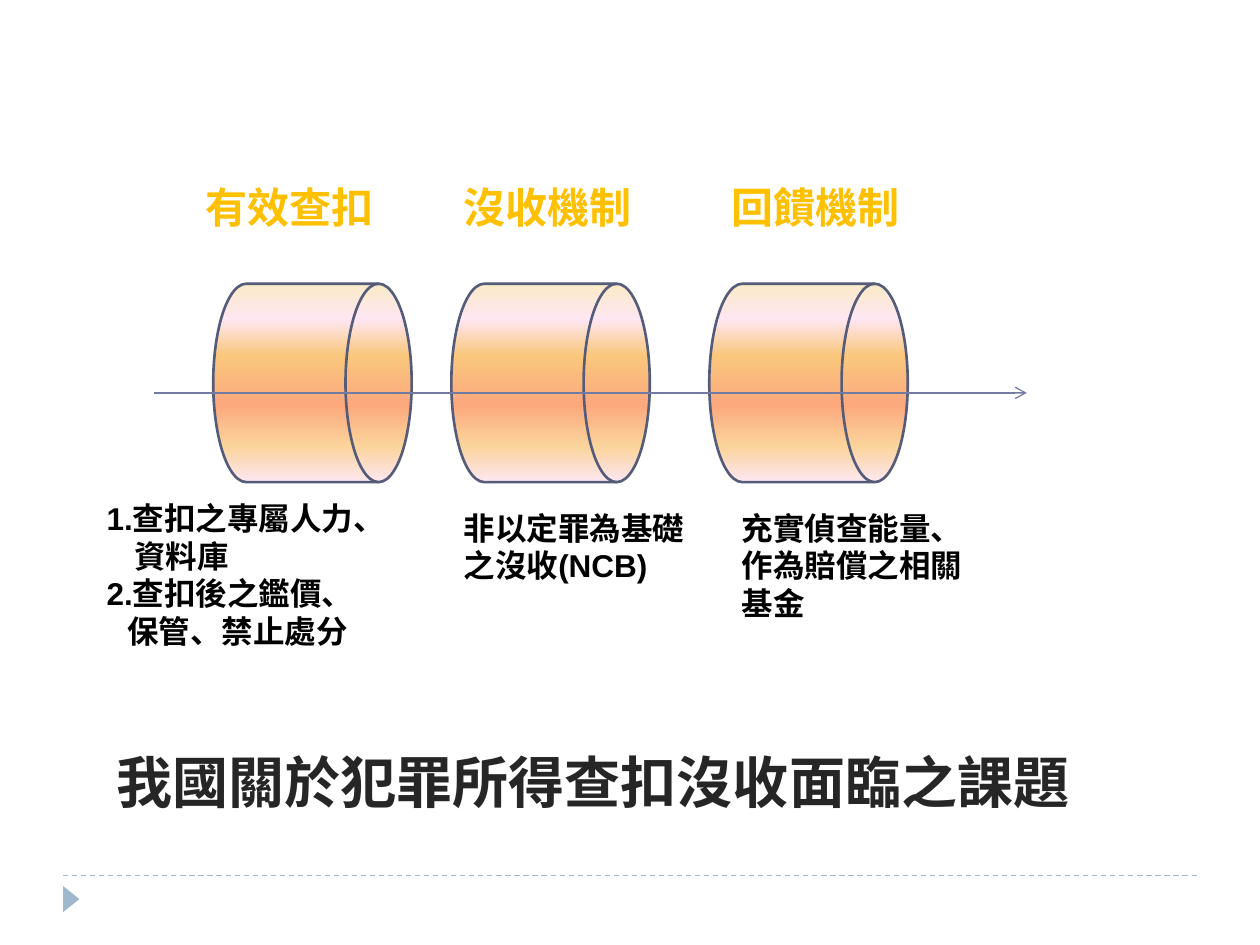
from collections import namedtuple

from lxml.etree import SubElement
from pptx import Presentation
from pptx.dml.color import RGBColor
from pptx.enum.dml import MSO_LINE
from pptx.enum.shapes import MSO_CONNECTOR, MSO_SHAPE
from pptx.enum.text import MSO_ANCHOR, PP_ALIGN
from pptx.oxml.ns import qn
from pptx.util import Cm, Pt

GOLD = RGBColor(0xFF, 0xC0, 0x00)
BLACK = RGBColor(0x00, 0x00, 0x00)
CHARCOAL = RGBColor(0x26, 0x26, 0x26)
SLATE = RGBColor(0x54, 0x5C, 0x79)
INDIGO = RGBColor(0x72, 0x7C, 0xA3)
PALE_BLUE = RGBColor(0x9F, 0xB8, 0xCD)
SUNRISE = [
    (0, RGBColor(0xFB, 0xEA, 0xC7)),
    (18, RGBColor(0xFE, 0xE7, 0xF2)),
    (36, RGBColor(0xFA, 0xC7, 0x7D)),
    (61, RGBColor(0xFB, 0xA9, 0x7D)),
    (82, RGBColor(0xFB, 0xD4, 0x9C)),
    (100, RGBColor(0xFE, 0xE7, 0xF2)),
]

Box = namedtuple("Box", "left top width height")
Stage = namedtuple("Stage", "left heading heading_shift note note_box")

STAGES = [
    Stage(4.3, "有效查扣", -0.4,
          [("1.查扣之專屬人力、", 0), ("資料庫", 0.56),
           ("2.查扣後之鑑價、", 0), ("保管、禁止處分", 0.42)],
          Box(-2.4, 6.4, 6, 3.33)),
    Stage(9.1, "沒收機制", 0, [("非以定罪為基礎之沒收(NCB)", 0)],
          Box(0, 6.6, 5.2, 1.8)),
    Stage(14.3, "回饋機制", 0.2, [("充實偵查能量、作為賠償之相關基金", 0)],
          Box(0.4, 6.6, 5.2, 2.57)),
]


def write_run(paragraph, text, size, color, font="Arial"):
    """Add one bold run to a paragraph."""
    run = paragraph.add_run()
    run.text = text
    run.font.name = font
    run.font.size = Pt(size)
    run.font.bold = True
    run.font.color.rgb = color


def add_text(slide, box, lines, size, color):
    """Add a text box of (text, indent) lines."""
    frame = slide.shapes.add_textbox(*map(Cm, box)).text_frame
    frame.word_wrap = True
    for index, (text, indent) in enumerate(lines):
        paragraph = frame.add_paragraph() if index else frame.paragraphs[0]
        if indent:
            paragraph._p.get_or_add_pPr().set("marL", str(Cm(indent)))
        write_run(paragraph, text, size, color)


def fill_gradient(shape, stops):
    """Fill a shape from top to bottom with the given colour stops."""
    shape.fill.gradient()
    gradient = shape._element.spPr.find(qn("a:gradFill"))
    for child in list(gradient):
        gradient.remove(child)
    stop_list = SubElement(gradient, qn("a:gsLst"))
    for percent, color in stops:
        stop = SubElement(stop_list, qn("a:gs"), pos=str(percent * 1000))
        SubElement(stop, qn("a:srgbClr"), val=str(color))
    SubElement(gradient, qn("a:lin"), ang="5400000", scaled="0")


def add_line(slide, start, end, color):
    """Add a thin straight connector without shadow."""
    line = slide.shapes.add_connector(
        MSO_CONNECTOR.STRAIGHT, *map(Cm, (*start, *end)))
    line.line.color.rgb = color
    line.line.width = Pt(0.75)
    SubElement(line._element.spPr, qn("a:effectLst"))
    return line


def add_stage(slide, stage, top):
    """Place a heading, drum and note relative to the stage's corner."""
    drum = slide.shapes.add_shape(
        MSO_SHAPE.FLOWCHART_DIRECT_ACCESS_STORAGE,
        Cm(stage.left), Cm(top + 2.19), Cm(4), Cm(4))
    drum.shadow.inherit = False
    fill_gradient(drum, SUNRISE)
    drum.line.color.rgb = SLATE
    drum.line.width = Pt(1.5)
    add_text(slide, Box(stage.left + stage.heading_shift, top, 4.8, 1.27),
             [(stage.heading, 0)], 24, GOLD)
    note_box = stage.note_box._replace(
        left=stage.left + stage.note_box.left, top=top + stage.note_box.top)
    add_text(slide, note_box, stage.note, 18, BLACK)


def add_process(slide, box):
    """Place the three stages and the arrow running through them."""
    for stage in STAGES:
        add_stage(slide, stage, box.top)
    axis = box.top + 4.39
    arrow = add_line(slide, (box.left, axis), (box.left + box.width, axis), INDIGO)
    SubElement(arrow.line._get_or_add_ln(), qn("a:tailEnd"), type="arrow")


def add_title(slide, box):
    """Move and format the title placeholder."""
    title = slide.shapes.title
    title.left, title.top, title.width, title.height = map(Cm, box)
    frame = title.text_frame
    frame.word_wrap = True
    frame.vertical_anchor = MSO_ANCHOR.TOP
    paragraph = frame.paragraphs[0]
    paragraph.alignment = PP_ALIGN.LEFT
    write_run(paragraph, "我國關於犯罪所得查扣沒收面臨之課題", 32, CHARCOAL,
              "TeX Gyre Bonum")


def add_footer(slide, box):
    """Place the dashed rule and the triangle marker below it."""
    rule = add_line(slide, (box.left, box.top),
                    (box.left + box.width, box.top), PALE_BLUE)
    rule.line.dash_style = MSO_LINE.DASH
    marker = slide.shapes.add_shape(
        MSO_SHAPE.ISOSCELES_TRIANGLE,
        Cm(box.left - 0.1), Cm(box.top + 0.31), Cm(0.53), Cm(0.33))
    marker.rotation = 90
    marker.shadow.inherit = False
    marker.fill.solid()
    marker.fill.fore_color.rgb = PALE_BLUE
    marker.line.fill.background()


def main():
    """Build and save the slide."""
    deck = Presentation()
    deck.slide_width, deck.slide_height = Cm(25.4), Cm(19.05)
    slide = deck.slides.add_slide(deck.slide_layouts[5])
    add_footer(slide, Box(1.27, 17.65, 22.86, 0.64))
    add_process(slide, Box(3.1, 3.53, 17.6, 9.73))
    add_title(slide, Box(2.1, 14.94, 20.4, 2.2))
    deck.save("out.pptx")


if __name__ == "__main__":
    main()
